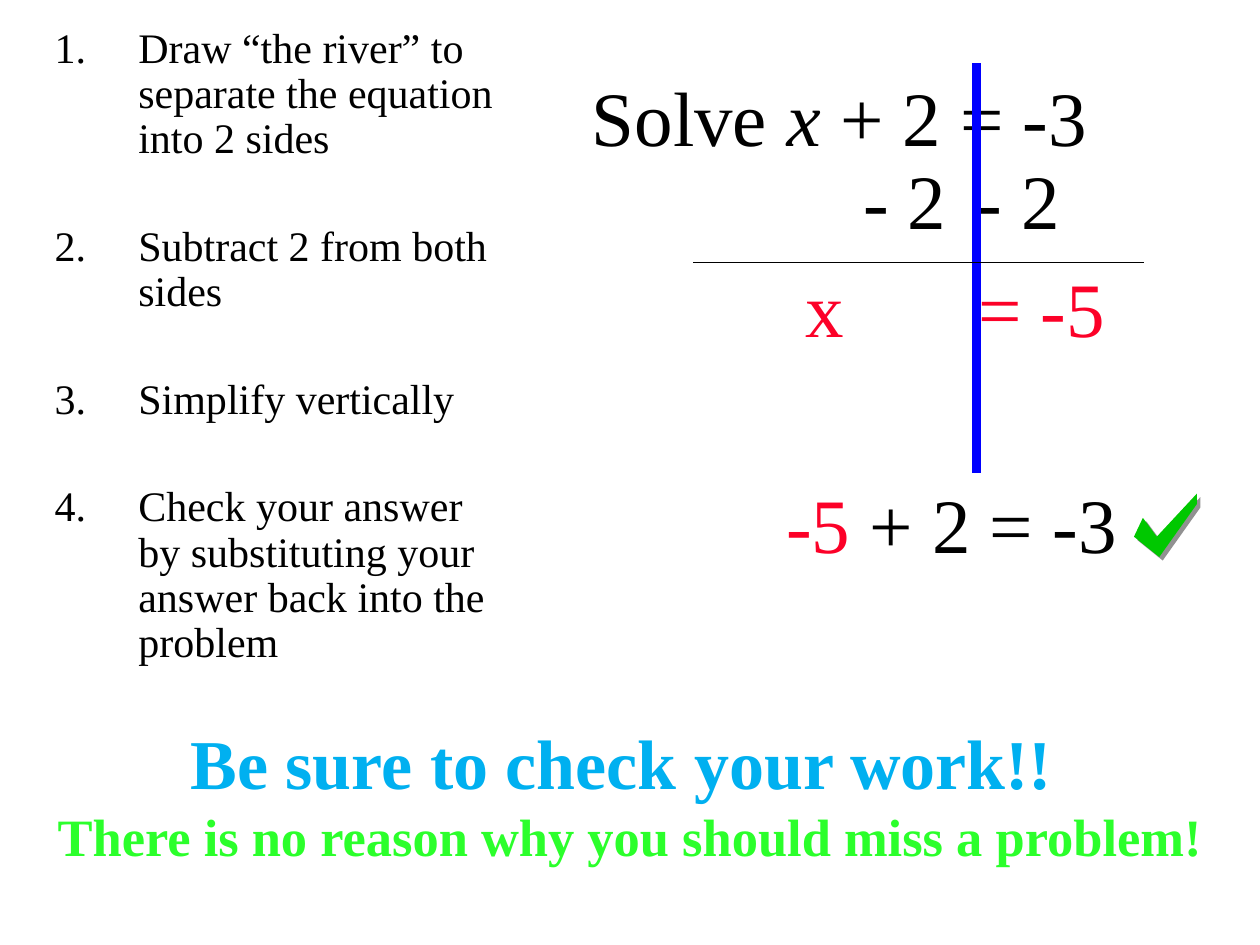
from pptx import Presentation
from pptx.util import Cm, Pt
from pptx.dml.color import RGBColor
from pptx.enum.shapes import MSO_CONNECTOR
from pptx.enum.text import MSO_ANCHOR, PP_ALIGN
from pptx.oxml import parse_xml
from pptx.oxml.ns import nsdecls
from lxml.etree import SubElement


def paint(part, tone):
    part.rgb = RGBColor.from_string(tone)


def write(para, runs, size, bold=False):
    for text, tone in runs:
        run = para.add_run()
        run.text = text
        run.font.name = "Times New Roman"
        run.font.size = Pt(size)
        run.font.bold = bold
        paint(run.font.color, tone)


black, red = "000000", "FC0128"
deck = Presentation()
deck.slide_width, deck.slide_height = Cm(25.4), Cm(19.05)
slide = deck.slides.add_slide(deck.slide_layouts[6])

frames = []
for spot in [
    (11.68, 1.27, 11.6, 2.12),
    (14.82, 2.96, 10.58, 11.43),
    (0.85, 0.42, 9.74, 11.43),
]:
    frame = slide.shapes.add_textbox(*map(Cm, spot)).text_frame
    frame.word_wrap = True
    frames.append(frame)
title, work, steps = frames

title.vertical_anchor = MSO_ANCHOR.MIDDLE
para = title.paragraphs[0]
write(para, [("Solve ", black), ("x", black), (" + 2 = -3", black)], 44)
para.runs[1].font.italic = True

rows = [
    ([("\t- 2\t- 2", black)], (2.33, 4.62), 0),
    ([("\tx\t= -5", red)], (1.16, 4.65), 8.8),
    ([("\t-5", red), (" + 2 = -3", black)], (0.78,), 70.5),
]
for i, (runs, stops, gap) in enumerate(rows):
    para = work.add_paragraph() if i else work.paragraphs[0]
    para.space_before = Pt(gap)
    write(para, runs, 44)
    tabs = parse_xml(f"<a:tabLst {nsdecls('a')}/>")
    for stop in stops:
        tabs.append(parse_xml(f'<a:tab {nsdecls("a")} pos="{Cm(stop)}" algn="l"/>'))
    para._p.get_or_add_pPr().append(tabs)

tasks = [
    "Draw “the river” to separate the equation into 2 sides",
    "Subtract 2 from both sides",
    "Simplify vertically",
    "Check your answer by substituting your answer back into the problem",
]
for i, task in enumerate(tasks):
    para = steps.add_paragraph() if i else steps.paragraphs[0]
    para.line_spacing = 0.9
    para.space_before = Pt(35.5 if i else 0)
    write(para, [(task, black)], 24)
    props = para._p.get_or_add_pPr()
    props.set("marL", str(Cm(1.69)))
    props.set("indent", str(-Cm(1.69)))
    props.append(parse_xml(f'<a:buFont {nsdecls("a")} typeface="Times New Roman"/>'))
    props.append(parse_xml(f'<a:buAutoNum {nsdecls("a")} type="arabicPeriod"/>'))

for ends, tone, width in [
    ((19.69, 1.27, 19.69, 9.53), "0000FF", 5),
    ((13.97, 5.29, 23.07, 5.29), black, 1),
]:
    line = slide.shapes.add_connector(MSO_CONNECTOR.STRAIGHT, *map(Cm, ends))
    paint(line.line.color, tone)
    line.line.width = Pt(width)
    SubElement(line._element.spPr, "{http://schemas.openxmlformats.org/drawingml/2006/main}effectLst")

points = [
    (Cm(x), Cm(y))
    for x, y in [(23.04, 10.44), (22.86, 10.82), (23.37, 11.23),
                 (24.13, 10.16), (24.13, 9.95), (23.32, 10.82)]
]
pen = slide.shapes.build_freeform(*points[0])
pen.add_line_segments(points[1:], close=True)
tick = pen.convert_to_shape()
tick.fill.solid()
paint(tick.fill.fore_color, "00C800")
tick.line.fill.background()
tick._element.spPr.append(parse_xml(
    f'<a:effectLst {nsdecls("a")}><a:outerShdw dist="{Pt(2.8)}" dir="2700000">'
    '<a:srgbClr val="919191"/></a:outerShdw></a:effectLst>'
))

foot = slide.shapes.add_textbox(Cm(0.85), Cm(14.39), Cm(23.71), Cm(3.25)).text_frame
foot.word_wrap = True
cries = [
    ("Be sure to check your work!! ", "00B0F0", 40),
    ("There is no reason why you should miss a problem!", "2BFF2B", 30),
]
for i, (cry, tone, size) in enumerate(cries):
    para = foot.add_paragraph() if i else foot.paragraphs[0]
    para.alignment = PP_ALIGN.CENTER
    write(para, [(cry, tone)], size, True)

deck.save("out.pptx")
